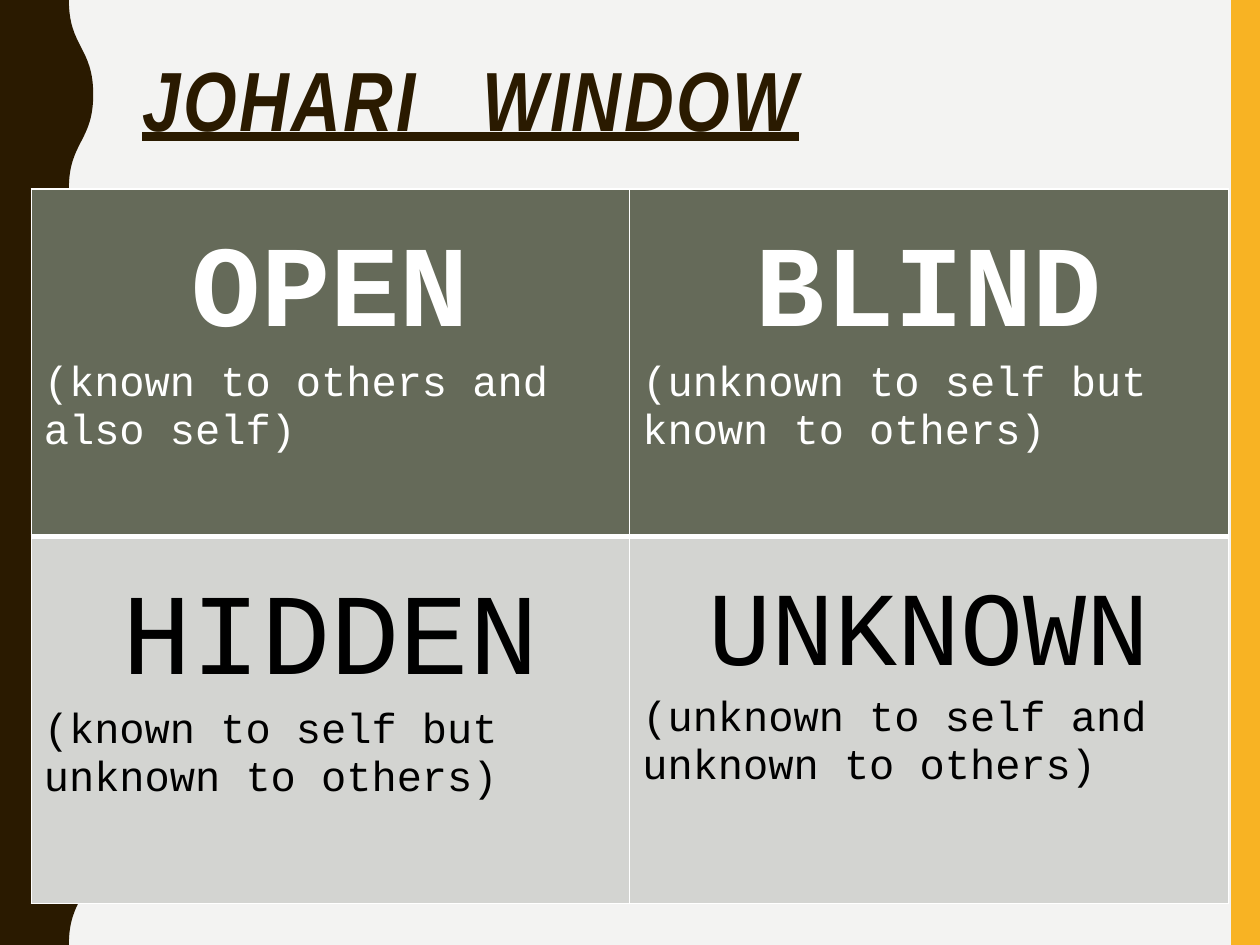
from dataclasses import dataclass

from lxml import etree
from pptx import Presentation
from pptx import util as u
from pptx.dml.color import RGBColor
from pptx.enum import shapes, text
from pptx.oxml import ns

# Content: (heading, heading size, explanation) for each pane
TITLE = "JOHARI   WINDOW"
PANES = [
    [("OPEN", 66, "(known to others and also self)"),
     ("BLIND", 66, "(unknown to self but known to others)")],
    [("HIDDEN", 66, "(known to self but unknown to others)"),
     ("UNKNOWN", 60, "(unknown to self and unknown to others)")],
]


@dataclass(frozen=True)
class Theme:
    background: str = "F3F3F2"
    dark: str = "2A1A00"
    accent: str = "F8B323"
    white: str = "FFFFFF"
    title_font: str = "Arial Narrow"
    pane_font: str = "Courier New"
    title_size: int = 48
    note_size: int = 24
    # Per row: fill, text colour, bold heading
    rows: tuple = (("656A59", "FFFFFF", True), ("D3D4D1", "000000", False))


THEME = Theme()
WIDTH, HEIGHT = 25.4, 19.05
BAR_WIDTH = 0.58
WAVE_INNER, WAVE_OUTER, HALF_WAVES = 1.39, 1.88, 10
TABLE_LEFT, TABLE_TOP, TABLE_WIDTH = 0.63, 3.81, 24.13
ROW_HEIGHTS = (7, 7.4)


def paint(shape, color):
    shape.shadow.inherit = False
    shape.fill.solid()
    shape.fill.fore_color.rgb = RGBColor.from_string(color)
    shape.line.fill.background()


def add_run(paragraph, words, font, size, color, bold):
    run = paragraph.add_run()
    run.text = words
    run.font.name = font
    run.font.size = u.Pt(size)
    run.font.bold = bold
    run.font.color.rgb = RGBColor.from_string(color)
    return run


def bend(segment, start, end):
    """Turn a straight freeform segment into an S-shaped Bezier curve."""
    middle = (start[1] + end[1]) // 2
    segment.tag = ns.qn("a:cubicBezTo")
    for x, y in ((end[0], middle), (start[0], middle)):
        segment.insert(0, etree.Element(ns.qn("a:pt"), x=str(x), y=str(y)))


def add_wave(slide):
    edge = [(u.Cm(WAVE_OUTER if index % 2 else WAVE_INNER), u.Cm(HEIGHT * index / HALF_WAVES))
            for index in range(HALF_WAVES + 1)]
    builder = slide.shapes.build_freeform(0, 0)
    builder.add_line_segments([*edge, (0, u.Cm(HEIGHT))])
    wave = builder.convert_to_shape()
    paint(wave, THEME.dark)
    # The first segment is the straight top side
    segments = list(wave._element.iter(ns.qn("a:lnTo")))[1:]
    for segment, start, end in zip(segments, edge, edge[1:]):
        bend(segment, start, end)


def add_bar(slide):
    bar = slide.shapes.add_shape(shapes.MSO_SHAPE.RECTANGLE, u.Cm(WIDTH - BAR_WIDTH), 0,
                                 u.Cm(BAR_WIDTH), u.Cm(HEIGHT))
    paint(bar, THEME.accent)


def add_title(slide):
    box = slide.shapes.add_textbox(u.Cm(2.62), u.Cm(1.07), u.Cm(21.2), u.Cm(4.14))
    box.text_frame.word_wrap = True
    paragraph = box.text_frame.paragraphs[0]
    paragraph.line_spacing = 0.9
    run = add_run(paragraph, TITLE, THEME.title_font, THEME.title_size, THEME.dark, True)
    run.font.italic = True
    run.font.underline = True
    run.font._element.set("spc", "150")


def set_borders(cell, widths):
    properties = cell._tc.get_or_add_tcPr()
    for index, (side, points) in enumerate(widths.items()):
        line = etree.Element(ns.qn(f"a:ln{side}"), w=str(u.Pt(points)))
        fill = etree.SubElement(line, ns.qn("a:solidFill"))
        etree.SubElement(fill, ns.qn("a:srgbClr"), val=THEME.white)
        properties.insert(index, line)


def fill_pane(cell, pane, style):
    heading, size, note = pane
    fill, color, bold = style
    cell.fill.solid()
    cell.fill.fore_color.rgb = RGBColor.from_string(fill)
    cell.margin_top = u.Cm(0.84)
    paragraph = cell.text_frame.paragraphs[0]
    paragraph.alignment = text.PP_ALIGN.CENTER
    add_run(paragraph, heading, THEME.pane_font, size, color, bold)
    paragraph = cell.text_frame.add_paragraph()
    add_run(paragraph, note, THEME.pane_font, THEME.note_size, color, False)


def add_window(slide):
    frame = slide.shapes.add_table(len(PANES), len(PANES[0]), u.Cm(TABLE_LEFT), u.Cm(TABLE_TOP),
                                   u.Cm(TABLE_WIDTH), u.Cm(sum(ROW_HEIGHTS)))
    table = frame.table
    for row, panes in enumerate(PANES):
        table.rows[row].height = u.Cm(ROW_HEIGHTS[row])
        for column, pane in enumerate(panes):
            cell = table.cell(row, column)
            fill_pane(cell, pane, THEME.rows[row])
            # The rule under the first row is heavier
            set_borders(cell, {"L": 1, "R": 1, "T": 1, "B": 1 if row else 3})


def main():
    presentation = Presentation()
    presentation.slide_width, presentation.slide_height = u.Cm(WIDTH), u.Cm(HEIGHT)
    slide = presentation.slides.add_slide(presentation.slide_layouts[6])
    slide.background.fill.solid()
    slide.background.fill.fore_color.rgb = RGBColor.from_string(THEME.background)
    add_bar(slide)
    add_wave(slide)
    add_title(slide)
    add_window(slide)
    presentation.save("out.pptx")


if __name__ == "__main__":
    main()
